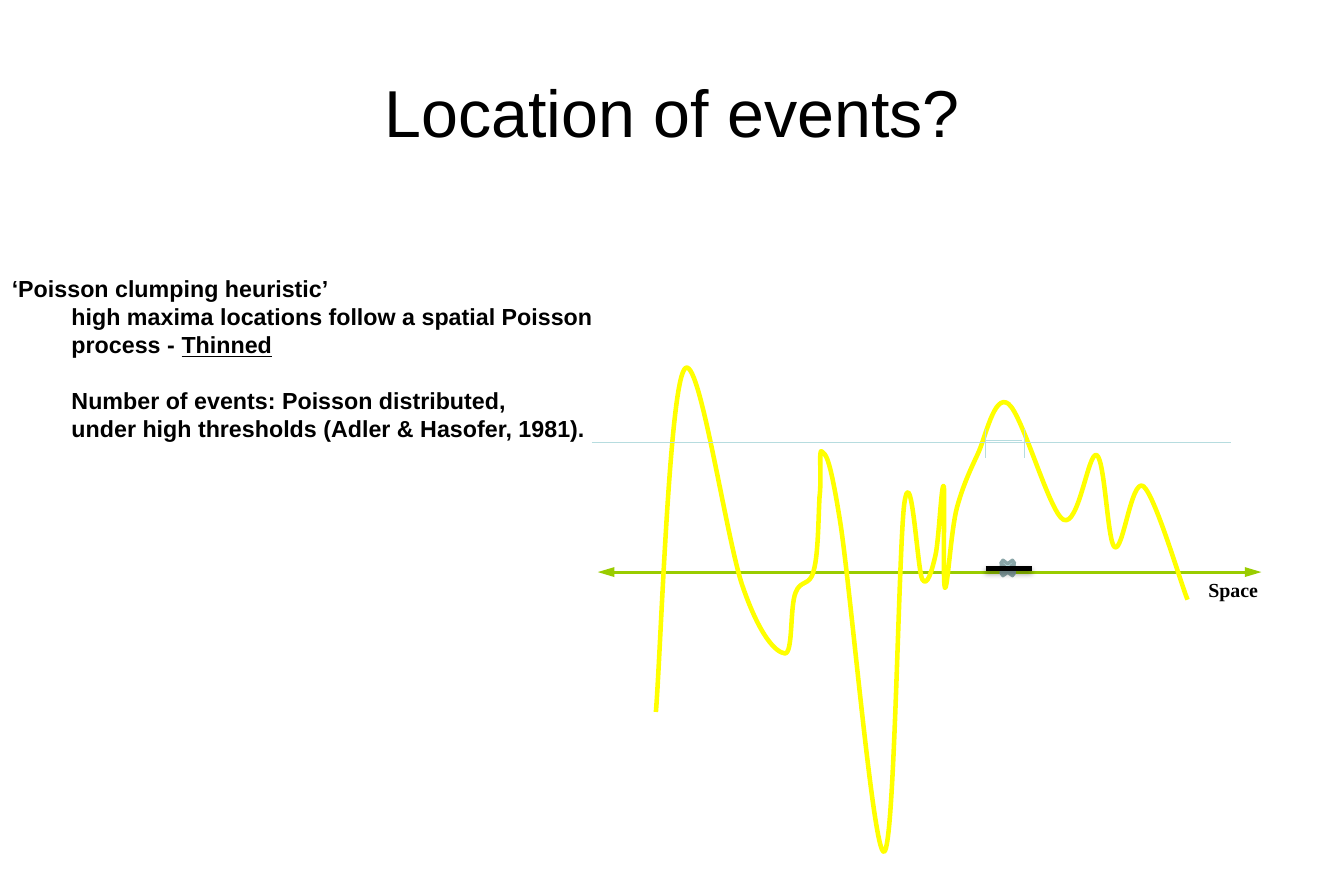
from lxml.etree import SubElement as Sub
from pptx import Presentation
from pptx.dml.color import RGBColor
from pptx.enum.shapes import MSO_CONNECTOR as Conn, MSO_SHAPE as Geo
from pptx.enum.text import MSO_ANCHOR as Anchor, PP_ALIGN as Align
from pptx.oxml.ns import qn
from pptx.util import Pt


def paint(form, tint):
    """Give a fill, line or font a solid colour."""
    if hasattr(form, "solid"):
        form.solid()
        form.fore_color.rgb = RGBColor.from_string(tint)
    else:
        form.color.rgb = RGBColor.from_string(tint)


def write(box, paras, size, font="Arial", bold=False, align=Align.LEFT,
          anchor=Anchor.TOP, wrap=True):
    """Add a text box; each paragraph is (indent, space before, runs)."""
    frame = deck.add_textbox(*map(Pt, box)).text_frame
    frame.word_wrap, frame.vertical_anchor = wrap, anchor
    for i, (indent, gap, runs) in enumerate(paras):
        para = frame.paragraphs[0] if i == 0 else frame.add_paragraph()
        para.alignment, para.space_before = align, Pt(gap)
        para._p.get_or_add_pPr().set("marL", str(Pt(indent)))
        for text, under in runs:
            run = para.add_run()
            run.text = text
            run.font.name, run.font.size = font, Pt(size)
            run.font.bold, run.font.underline = bold, under
            paint(run.font, "000000")


prs = Presentation()
prs.slide_width, prs.slide_height = Pt(810), Pt(540)
deck = prs.slides.add_slide(prs.slide_layouts[6]).shapes

# Title
write((40.5, 21.6, 729, 90), [(0, 0, [("Location of events?", False)])], 40,
      align=Align.CENTER, anchor=Anchor.MIDDLE)

# Straight lines: x1, y1, x2, y2, colour, width
pale = "B6DCDF"
lines = {
    "axis": (360.3, 344.8, 760.2, 344.8, "99CC00", 1.75),
    "threshold": (356.7, 266.6, 742, 266.6, pale, 0.75),
    "event span": (594, 342.6, 622, 342.6, "000000", 3),
    "peak span": (594, 265.7, 616, 265.7, pale, 0.75),
    "peak end": (617.3, 258.5, 617.3, 276.2, pale, 0.75),
    "peak start": (594, 258.5, 594, 276.2, pale, 0.75),
}

# Field curve: start point, then two handles and an end point per row,
# in hundredths of an inch (0.72 pt)
start = (549, 596)
curve = [
    (553, 548, 560, 326, 573, 309), (585, 292, 608, 453, 622, 492),
    (636, 532, 649, 546, 657, 547), (664, 547, 661, 508, 666, 496),
    (670, 485, 678, 491, 681, 478), (685, 465, 685, 433, 686, 416),
    (688, 400, 685, 374, 688, 378), (691, 381, 694, 379, 703, 435),
    (712, 491, 731, 716, 740, 713), (749, 711, 752, 459, 757, 421),
    (763, 383, 768, 478, 772, 485), (776, 492, 780, 478, 783, 465),
    (786, 452, 788, 403, 790, 407), (791, 412, 789, 489, 791, 492),
    (793, 495, 796, 444, 801, 425), (806, 407, 811, 396, 818, 381),
    (825, 367, 832, 329, 844, 338), (856, 347, 878, 428, 890, 435),
    (903, 442, 911, 377, 918, 381), (925, 385, 927, 454, 933, 458),
    (940, 463, 947, 400, 957, 407), (967, 415, 988, 487, 994, 502),
]

for part, (x1, y1, x2, y2, tint, width) in lines.items():
    # Event crosses lie under the black span
    if part == "event span":
        for top in (338.4, 336.2):
            cross = deck.add_shape(Geo.MATH_MULTIPLY, Pt(600.5), Pt(top),
                                   Pt(13.7), Pt(10.1))
            cross.shadow.inherit = False
            paint(cross.fill, "BBE0E3")
            paint(cross.line, "8AA6A8")
            cross.line.width = Pt(2)

    line = deck.add_connector(Conn.STRAIGHT, Pt(x1), Pt(y1), Pt(x2), Pt(y2))
    paint(line.line, tint)
    line.line.width = Pt(width)
    effect = Sub(line._element.spPr, qn("a:effectLst"))
    if part == "event span":
        shade = Sub(effect, qn("a:outerShdw"), blurRad=str(Pt(3.1)),
                    dist=str(Pt(1.8)), dir="5400000", rotWithShape="0")
        black = Sub(shade, qn("a:srgbClr"), val="000000")
        Sub(black, qn("a:alpha"), val="35000")

    if part == "axis":
        for end in ("a:headEnd", "a:tailEnd"):
            Sub(line.line._get_or_add_ln(), qn(end), type="triangle",
                w="med", len="lg")

        # Curve: join the points, then turn each three into one Bezier
        pen = deck.build_freeform(*start, scale=Pt(0.72))
        for row in curve:
            pen.add_line_segments(zip(row[::2], row[1::2]), close=False)
        wave = pen.convert_to_shape()
        wave.shadow.inherit = False
        wave.fill.background()
        paint(wave.line, "FFFF00")
        wave.line.width = Pt(2.75)
        track = next(wave._element.iter(qn("a:path")))
        steps = track.findall(qn("a:lnTo"))
        for i in range(0, len(steps), 3):
            bend = Sub(track, qn("a:cubicBezTo"))
            for step in steps[i:i + 3]:
                bend.append(step[0])
                track.remove(step)

        # Axis label
        write((721.2, 344.9, 44.6, 21.6), [(0, 0, [("Space", False)])], 12,
              font="Times New Roman", bold=True, wrap=False)

# Explanation
write((0, 162, 404.6, 108.7), [
    (0, 0, [("‘Poisson clumping heuristic’", False)]),
    (36, 0, [("high maxima locations follow a spatial Poisson process - ",
              False), ("Thinned", True)]),
    (36, 16.9, [("Number of events: Poisson distributed,", False)]),
    (36, 0, [("under high thresholds (Adler & Hasofer, 1981).", False)]),
], 14, bold=True)

prs.save("out.pptx")
